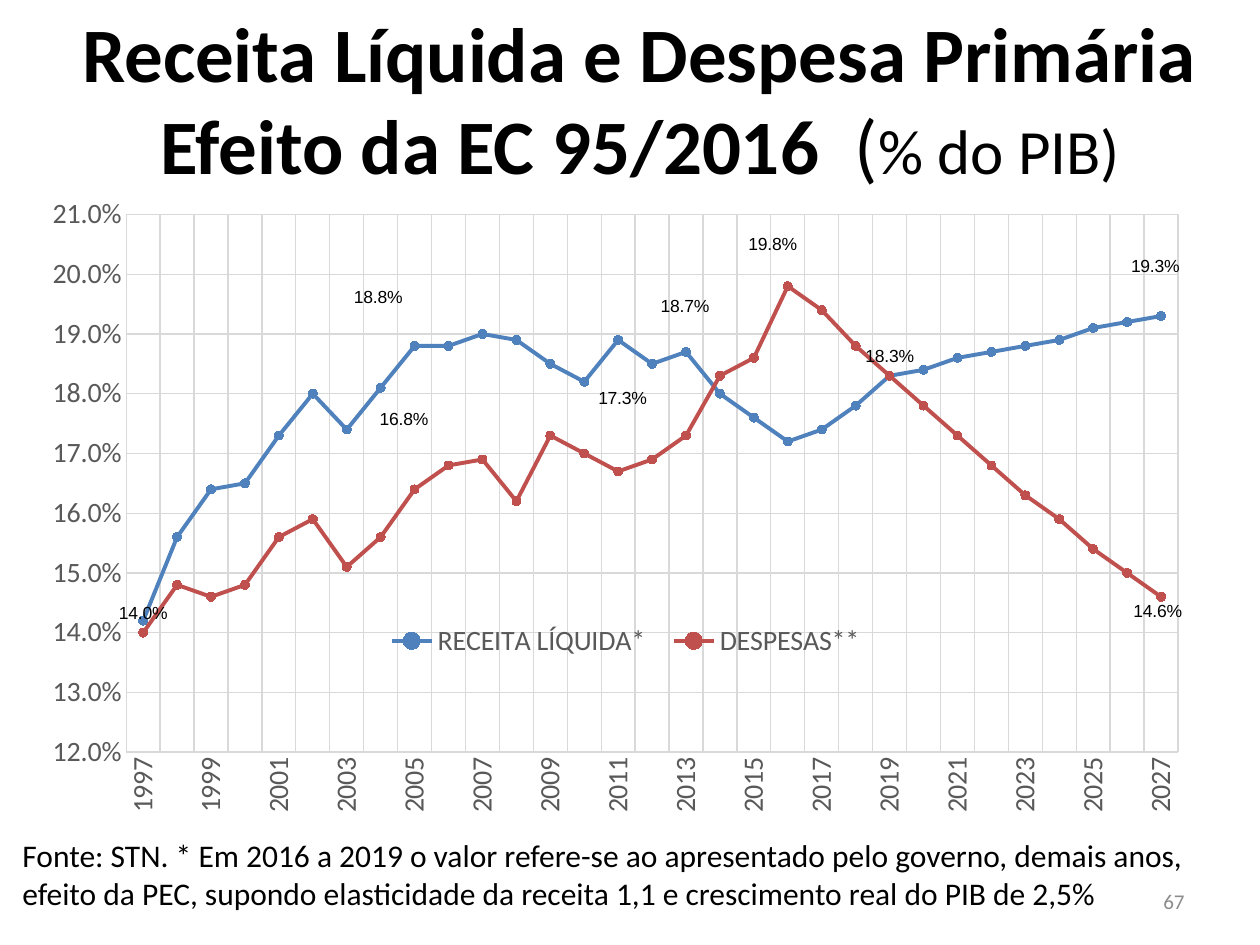
from lxml.etree import SubElement
from pptx import Presentation
from pptx.chart.data import CategoryChartData
from pptx.dml.color import RGBColor
from pptx.enum.chart import (XL_CHART_TYPE, XL_LABEL_POSITION, XL_LEGEND_POSITION,
                             XL_MARKER_STYLE, XL_TICK_MARK)
from pptx.enum.text import MSO_ANCHOR, PP_ALIGN
from pptx.oxml.ns import qn
from pptx.util import Emu, Pt

LINE_MARKERS = XL_CHART_TYPE.LINE_MARKERS
ABOVE = XL_LABEL_POSITION.ABOVE
BOTTOM = XL_LEGEND_POSITION.BOTTOM
CIRCLE = XL_MARKER_STYLE.CIRCLE
NO_TICK = XL_TICK_MARK.NONE
TOP, MIDDLE = MSO_ANCHOR.TOP, MSO_ANCHOR.MIDDLE
LEFT, CENTER, RIGHT = PP_ALIGN.LEFT, PP_ALIGN.CENTER, PP_ALIGN.RIGHT

EMU_PER_PX = 914400 / 126
BLACK, AXIS_GRAY, GRID_GRAY, NUMBER_GRAY = "000000", "595959", "D9D9D9", "8C8C8C"
YEARS = [str(year) for year in range(1997, 2028)]
CHART_BOX = (19, 189, 1178, 655)
PLOT_LAYOUT = {"layoutTarget": "inner", "xMode": "edge", "yMode": "edge",
               "x": 0.091, "y": 0.039, "w": 0.893, "h": 0.821}
LEGEND_LAYOUT = {"xMode": "edge", "yMode": "edge", "x": 0.3, "y": 0.66, "w": 0.43, "h": 0.06}

SERIES = [
    {"name": "RECEITA LÍQUIDA*", "color": "4F81BD",
     "values": [0.142, 0.156, 0.164, 0.165, 0.173, 0.180, 0.174, 0.181, 0.188, 0.188, 0.190,
                0.189, 0.185, 0.182, 0.189, 0.185, 0.187, 0.180, 0.176, 0.172, 0.174, 0.178,
                0.183, 0.184, 0.186, 0.187, 0.188, 0.189, 0.191, 0.192, 0.193],
     "label_shifts": {8: (-36, -29), 16: (-1, -26), 30: (-6, -30)}},
    {"name": "DESPESAS**", "color": "C0504D",
     "values": [0.140, 0.148, 0.146, 0.148, 0.156, 0.159, 0.151, 0.156, 0.164, 0.168, 0.169,
                0.162, 0.173, 0.170, 0.167, 0.169, 0.173, 0.183, 0.186, 0.198, 0.194, 0.188,
                0.183, 0.178, 0.173, 0.168, 0.163, 0.159, 0.154, 0.150, 0.146],
     "label_shifts": {0: (0, 0), 9: (-45, -27), 16: (-64, -18), 19: (-15, -22),
                      22: (0, 0), 30: (-3, 34)}},
]


def px(length):
    """Turn pixels into EMU."""
    return Emu(round(length * EMU_PER_PX))


def rgb(color):
    """Turn a hex string into a colour."""
    return RGBColor.from_string(color)


def format_font(font, size, color=BLACK, name="Calibri", bold=False):
    """Set the look of a font."""
    font.size, font.name, font.bold = Pt(size), name, bold
    font.color.rgb = rgb(color)


def add_text(paragraph, text, **style):
    """Add formatted text, with vertical tabs as line breaks."""
    for index, line in enumerate(text.split("\v")):
        if index:
            paragraph.add_line_break()
        run = paragraph.add_run()
        run.text = line
        format_font(run.font, **style)


def set_layout(parent, position, settings):
    """Give a chart part a manual layout."""
    for old_layout in parent.findall(qn("c:layout")):
        parent.remove(old_layout)
    layout = SubElement(parent, qn("c:layout"))
    manual = SubElement(layout, qn("c:manualLayout"))
    for name, value in settings.items():
        SubElement(manual, qn(f"c:{name}")).set("val", str(value))
    parent.insert(position, layout)


class SlideBuilder:
    """Hold the current slide and add styled elements to it."""

    def __init__(self, slide):
        """Keep the slide."""
        self.slide = slide

    def text_box(self, box, runs, align=LEFT, anchor=TOP):
        """Add a wrapped text box from pairs of text and style."""
        frame = self.slide.shapes.add_textbox(*map(px, box)).text_frame
        frame.word_wrap, frame.vertical_anchor = True, anchor
        paragraph = frame.paragraphs[0]
        paragraph.alignment = align
        for text, style in runs:
            add_text(paragraph, text, **style)

    def line_chart(self, box, categories, series_list):
        """Add a line chart with markers and selected labels."""
        data = CategoryChartData(number_format="0.0%")
        data.categories = categories
        for item in series_list:
            data.add_series(item["name"], item["values"])
        chart = self.slide.shapes.add_chart(LINE_MARKERS, *map(px, box), data).chart
        chart.has_title = False
        format_font(chart.font, 16)
        set_layout(chart.plots[0]._element.getparent(), 0, PLOT_LAYOUT)
        chart.plots[0].vary_by_categories = False
        for series, item in zip(chart.plots[0].series, series_list):
            self.style_series(series, item["color"])
            self.label_points(series, item["label_shifts"], box)
        self.style_axes(chart)
        self.style_legend(chart)

    def style_series(self, series, color):
        """Colour the line and the markers."""
        series.smooth = False
        series.format.line.width = Pt(2.25)
        series.format.line.color.rgb = rgb(color)
        marker = series.marker
        marker.style, marker.size = CIRCLE, 5
        marker.format.fill.solid()
        marker.format.fill.fore_color.rgb = rgb(color)
        marker.format.line.color.rgb = rgb(color)

    def label_points(self, series, shifts, box):
        """Label some points, each moved by a number of px."""
        series.data_labels.show_value = False
        for leader in series._element.iter(qn("c:showLeaderLines")):
            leader.set("val", "0")
        for index, (right, down) in shifts.items():
            label = series.points[index].data_label
            format_font(label.font, 10, name="Arial")
            label.position = ABOVE
            element = series._element.xpath(f'.//c:dLbl[c:idx/@val="{index}"]')[0]
            if right or down:
                set_layout(element, 1, {"x": round(right / box[2], 3),
                                        "y": round(down / box[3], 3)})

    def style_axes(self, chart):
        """Set the scale, the grid and the axis text."""
        for axis in (chart.category_axis, chart.value_axis):
            axis.major_tick_mark = axis.minor_tick_mark = NO_TICK
            axis.has_major_gridlines = True
            format_font(axis.tick_labels.font, 16, AXIS_GRAY)
            for line in (axis.major_gridlines.format.line, axis.format.line):
                line.width = Pt(0.75)
                line.color.rgb = rgb(GRID_GRAY)
        value_axis = chart.value_axis
        value_axis.format.line.fill.background()
        value_axis.minimum_scale, value_axis.maximum_scale = 0.12, 0.21
        value_axis.major_unit = 0.01
        value_axis.tick_labels.number_format = "0.0%"
        value_axis.tick_labels.number_format_is_linked = False
        category_element = chart.category_axis._element
        category_element.find(qn("c:txPr")).find(qn("a:bodyPr")).set("rot", "-5400000")
        skip = SubElement(category_element, qn("c:tickLblSkip"))
        skip.set("val", "2")
        category_element.find(qn("c:noMultiLvlLbl")).addprevious(skip)

    def style_legend(self, chart):
        """Place the legend inside the plot."""
        chart.has_legend = True
        legend = chart.legend
        legend.position, legend.include_in_layout = BOTTOM, True
        format_font(legend.font, 16, AXIS_GRAY)
        set_layout(legend._element, 1, LEGEND_LAYOUT)


def main():
    """Build and save the slide."""
    presentation = Presentation()
    presentation.slide_width, presentation.slide_height = px(1260), px(945)
    builder = SlideBuilder(presentation.slides.add_slide(presentation.slide_layouts[6]))
    builder.line_chart(CHART_BOX, YEARS, SERIES)
    builder.text_box((10, 6, 1260, 183), [
        ("Receita Líquida e Despesa Primária\vEfeito da EC 95/2016 ", {"size": 44, "bold": True}),
        (" (", {"size": 44}),
        ("% do PIB)", {"size": 36}),
    ], CENTER, MIDDLE)
    builder.text_box((903, 876, 294, 50), [("67", {"size": 12, "color": NUMBER_GRAY})],
                     RIGHT, MIDDLE)
    builder.text_box((10, 830, 1240, 89), [(
        "Fonte: STN. * Em 2016 a 2019 o valor refere-se ao apresentado pelo governo, "
        "demais anos, efeito da PEC, supondo elasticidade da receita 1,1 e crescimento "
        "real do PIB de 2,5%", {"size": 18})])
    presentation.save("out.pptx")


if __name__ == "__main__":
    main()
